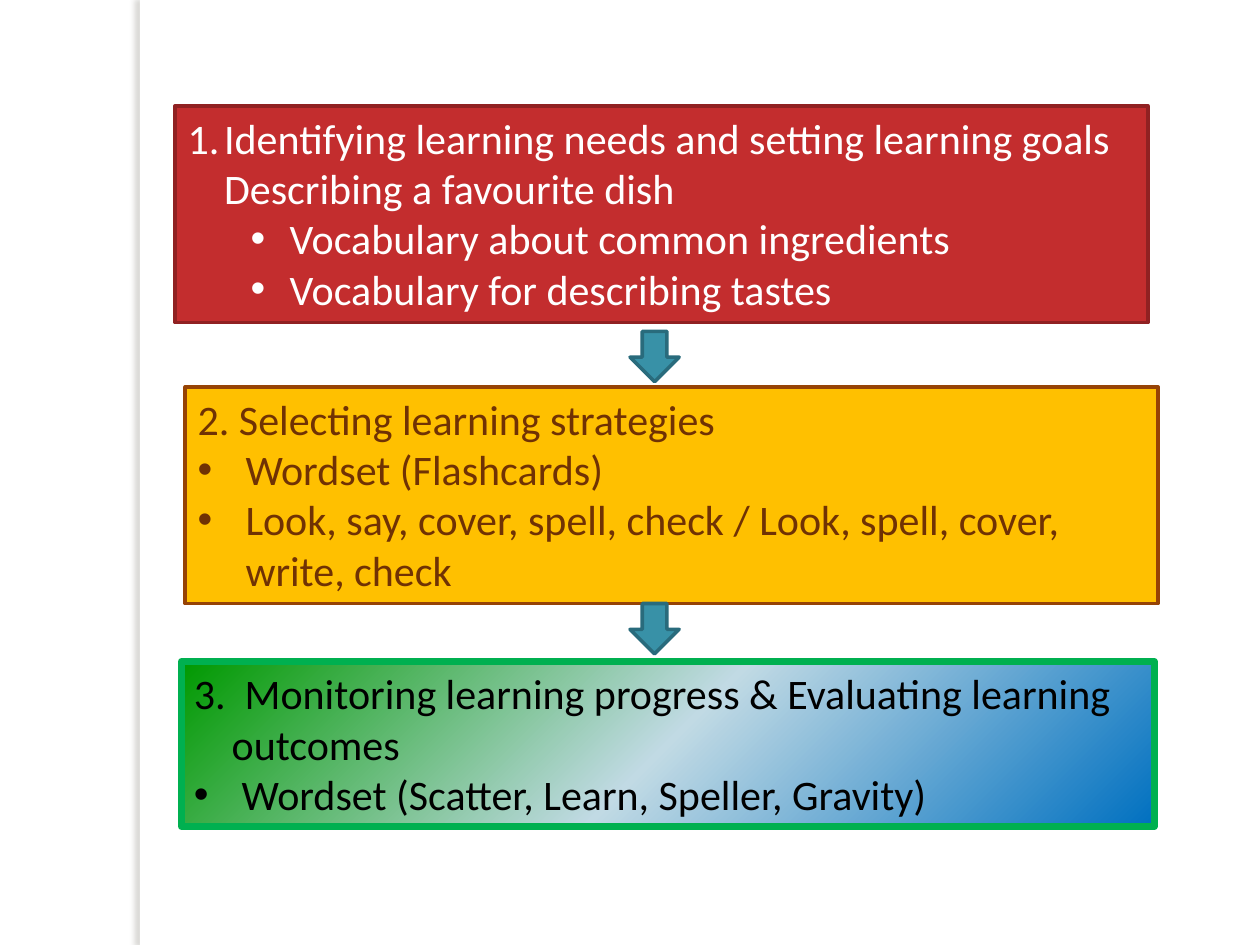
"""Build a slide showing three steps of self-directed vocabulary learning."""
import lxml.etree
import pptx
import pptx.dml.color
import pptx.enum.shapes
import pptx.enum.text
import pptx.oxml
import pptx.oxml.ns
import pptx.util

Inches = pptx.util.Inches
Pt = pptx.util.Pt
SHAPES = pptx.enum.shapes.MSO_SHAPE
A_NS = 'xmlns:a="http://schemas.openxmlformats.org/drawingml/2006/main"'

THEME = {
    "font": "Calibri", "size": 24, "white": "FFFFFF", "edge_shadow": "736F63",
    "needs": {"fill": "C32D2E", "line": "902122", "text": "FFFFFF", "width": 2},
    "strategies": {"fill": "FFC000", "line": "964305", "text": "703204", "width": 2},
    "progress": {"fill": "C1DAE4", "line": "00B050", "text": "000000", "width": 4},
    "arrow": {"fill": "3891A7", "line": "296B7C", "width": 2},
    "gradient": [(0, "009900"), (50, "C1DAE4"), (100, "0070C0")],
}


def add_block(kind, left, top, width, height, fill, line=None, line_width=0):
    block = slide.shapes.add_shape(
        kind, Inches(left), Inches(top), Inches(width), Inches(height))
    block.shadow.inherit = False
    block.fill.solid()
    block.fill.fore_color.rgb = pptx.dml.color.RGBColor.from_string(fill)
    if line:
        block.line.color.rgb = pptx.dml.color.RGBColor.from_string(line)
        block.line.width = Pt(line_width)
    else:
        block.line.fill.background()
    return block


def write_line(paragraph, text, color, margin=0, hang=0, level=0, bullet=None):
    paragraph.level = level
    paragraph.alignment = pptx.enum.text.PP_ALIGN.LEFT
    run = paragraph.add_run()
    run.text = text
    run.font.name = THEME["font"]
    run.font.size = Pt(THEME["size"])
    run.font.color.rgb = pptx.dml.color.RGBColor.from_string(color)
    properties = paragraph._p.get_or_add_pPr()
    properties.set("marL", str(Inches(margin)))
    properties.set("indent", str(Inches(-hang)))
    if bullet == "1.":
        lxml.etree.SubElement(
            properties, pptx.oxml.ns.qn("a:buAutoNum"), type="arabicPeriod")
    elif bullet:
        lxml.etree.SubElement(
            properties, pptx.oxml.ns.qn("a:buFont"), typeface="Arial")
        lxml.etree.SubElement(properties, pptx.oxml.ns.qn("a:buChar"), char=bullet)


deck = pptx.Presentation()
deck.slide_width, deck.slide_height = Inches(10), Inches(7.5)
slide = deck.slides.add_slide(deck.slide_layouts[6])

edge = add_block(SHAPES.RECTANGLE, 1.11, 0, 0.08, 7.5, THEME["white"])
edge_effects = edge._element.spPr.find(pptx.oxml.ns.qn("a:effectLst"))
edge_effects.append(pptx.oxml.parse_xml(
    f'<a:outerShdw {A_NS} blurRad="{Pt(3)}" dist="{Pt(3)}" dir="10800000" '
    f'algn="tl" rotWithShape="0"><a:srgbClr val="{THEME["edge_shadow"]}">'
    '<a:alpha val="25000"/></a:srgbClr></a:outerShdw>'))

item = {"margin": 0.38, "hang": 0.38, "bullet": "•"}
subitem = {"margin": 0.81, "hang": 0.31, "level": 1, "bullet": "•"}
steps = [
    ("needs", 1.39, 0.84, 1.72, [
        ("Identifying learning needs and setting learning goals",
         {"margin": 0.29, "hang": 0.29, "bullet": "1."}),
        ("Describing a favourite dish", {"margin": 0.29}),
        ("Vocabulary about common ingredients", subitem),
        ("Vocabulary for describing tastes", subitem)]),
    ("strategies", 1.47, 3.07, 1.72, [
        ("2. Selecting learning strategies", {}),
        ("Wordset (Flashcards)", item),
        ("Look, say, cover, spell, check / Look, spell, cover, write, check", item)]),
    ("progress", 1.44, 5.25, 1.31, [
        ("3.  Monitoring learning progress & Evaluating learning", {}),
        ("outcomes", {"margin": 0.3}),
        ("Wordset (Scatter, Learn, Speller, Gravity)", item)]),
]
for step, left, top, height, lines in steps:
    look = THEME[step]
    panel = add_block(SHAPES.RECTANGLE, left, top, 7.72, height,
                      look["fill"], look["line"], look["width"])
    frame = panel.text_frame
    frame.word_wrap = True
    frame.auto_size = pptx.enum.text.MSO_AUTO_SIZE.SHAPE_TO_FIT_TEXT
    frame.vertical_anchor = pptx.enum.text.MSO_ANCHOR.TOP
    for number, (text, layout) in enumerate(lines):
        paragraph = frame.add_paragraph() if number else frame.paragraphs[0]
        write_line(paragraph, text, look["text"], **layout)

stops = "".join(f'<a:gs pos="{position * 1000}"><a:srgbClr val="{color}"/></a:gs>'
                for position, color in THEME["gradient"])
progress_fill = panel._element.spPr.find(pptx.oxml.ns.qn("a:solidFill"))
progress_fill.getparent().replace(progress_fill, pptx.oxml.parse_xml(
    f'<a:gradFill {A_NS} rotWithShape="1"><a:gsLst>{stops}</a:gsLst>'
    '<a:lin ang="2700000" scaled="0"/></a:gradFill>'))

for arrow_top in (2.63, 4.79):
    add_block(SHAPES.DOWN_ARROW, 5, arrow_top, 0.39, 0.4, THEME["arrow"]["fill"],
              THEME["arrow"]["line"], THEME["arrow"]["width"])

deck.save("out.pptx")
